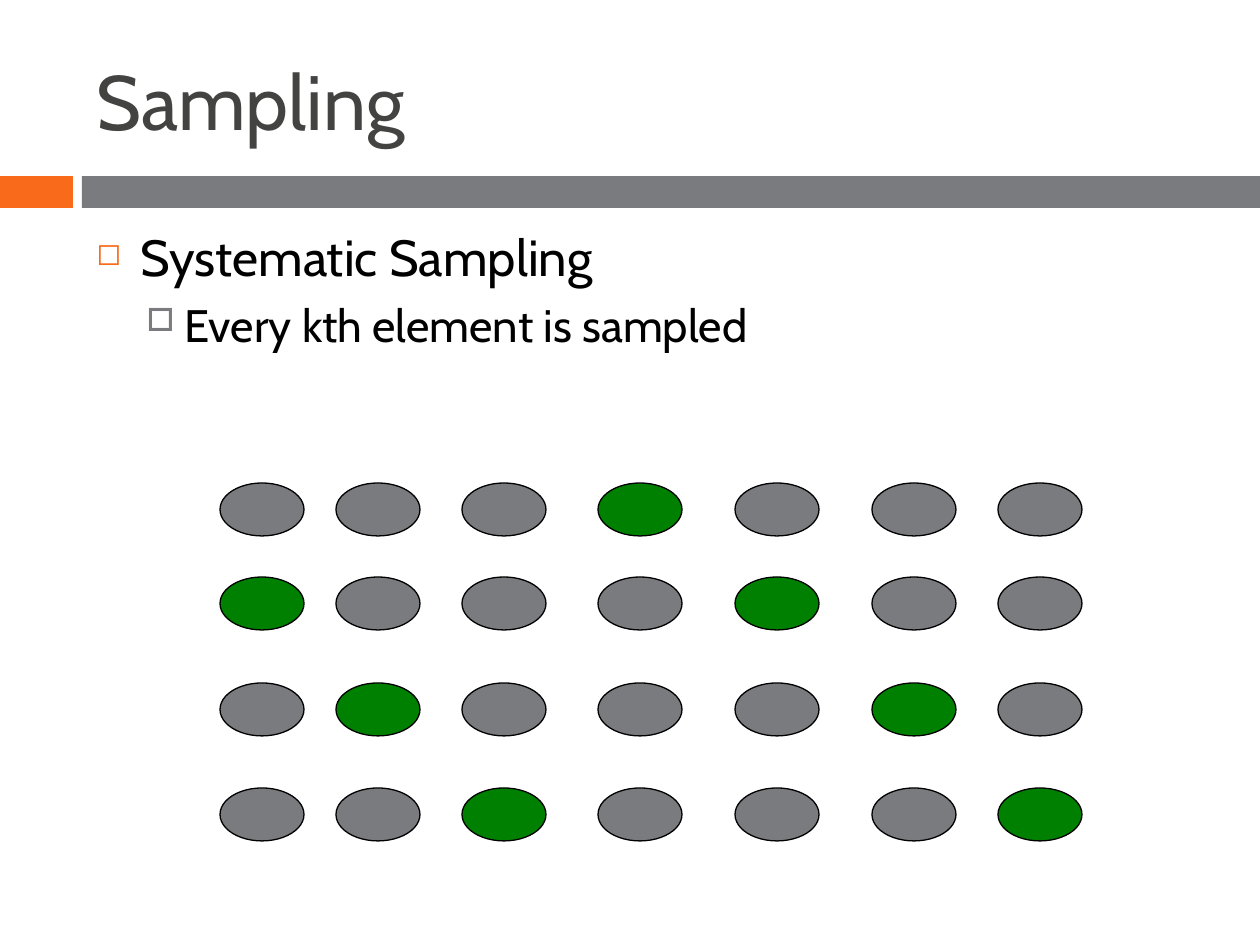
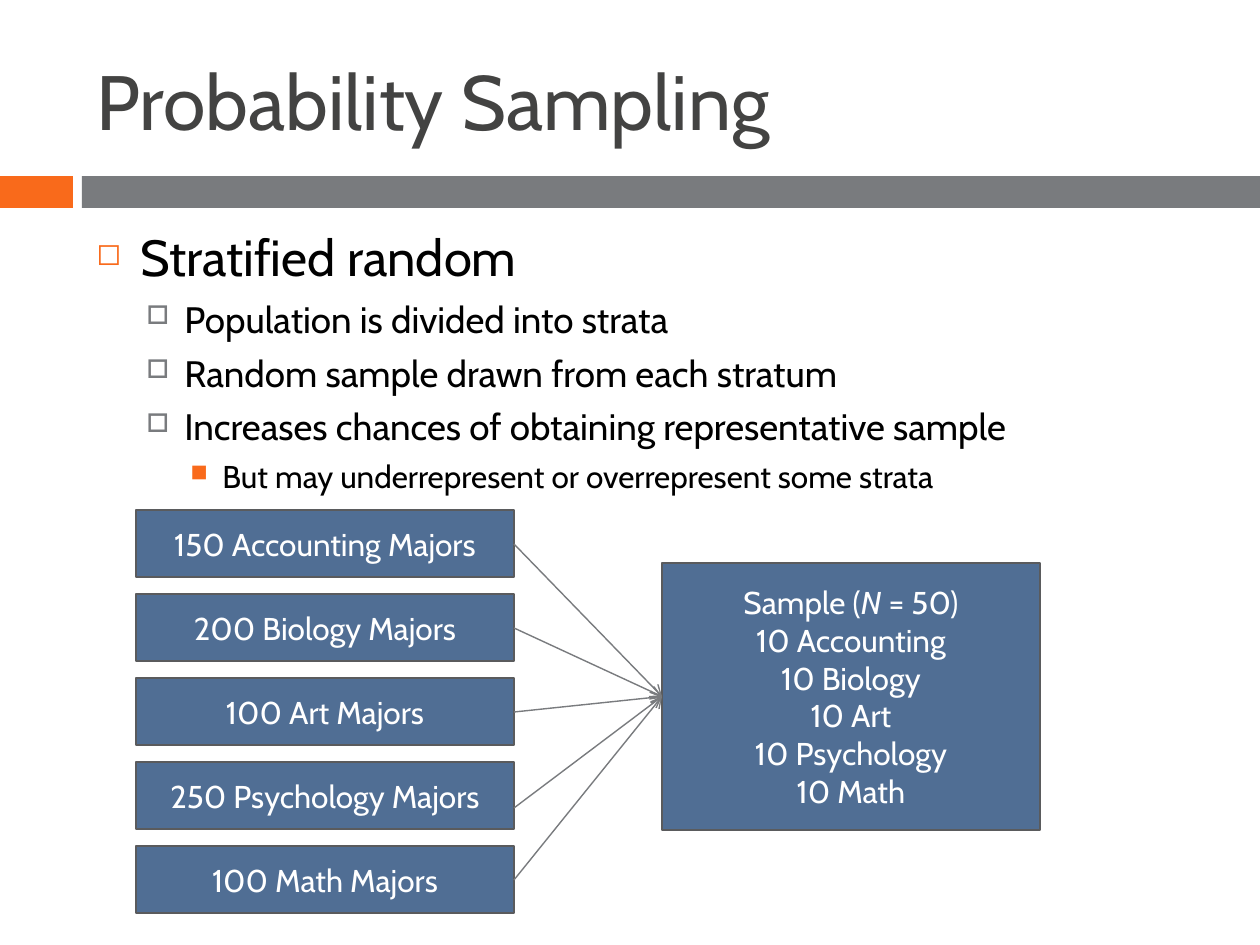
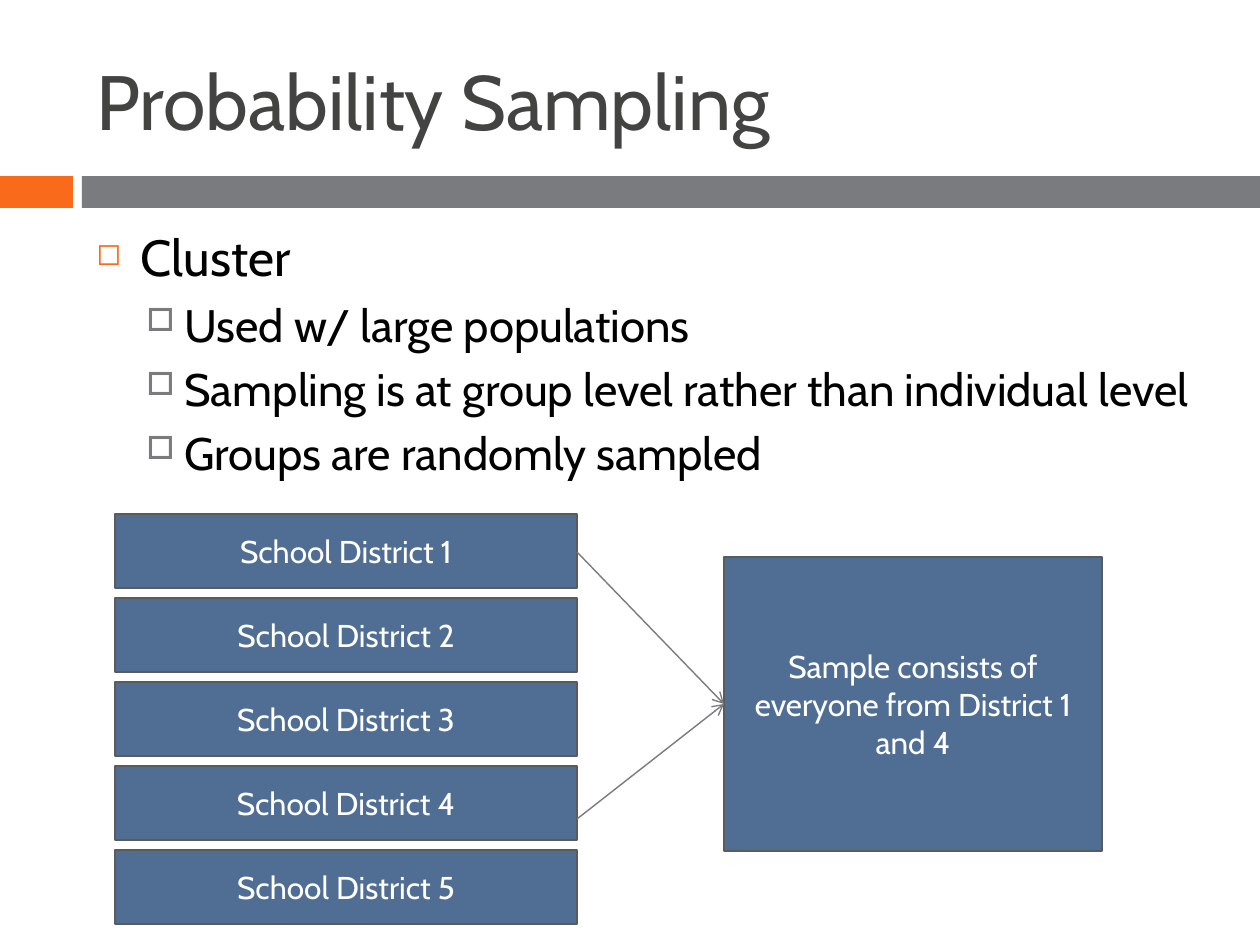
from lxml import etree
from pptx import Presentation
from pptx import util as u
from pptx.dml.color import RGBColor
from pptx.enum import shapes, text
from pptx.oxml import ns

PX = 914400 / 126  # EMU in one px
FONT = "Cabin"
COLORS = {
    "orange": "F96A1B", "gray": "797B7E", "title": "434342", "black": "000000",
    "white": "FFFFFF", "green": "008000", "blue": "506E94", "edge": "5A5B5D",
}
RECT, OVAL = shapes.MSO_SHAPE.RECTANGLE, shapes.MSO_SHAPE.OVAL

# One entry per outline level: indent and hanging in px, space before in points
LEVELS = [
    dict(left=44, hang=44, before=7, mark="◻", color="orange", percent=60),
    dict(left=88, hang=38, before=5.5, mark="□", color="gray", percent=70),
    dict(left=126, hang=32, before=5, mark="■", color="orange", percent=75),
]


def emu(*lengths):
    return [round(length * PX) for length in lengths]


def add_text(page, lines, at, kind=None, fill=None, edge=None, width=1.5, sizes=(18,),
             color="white", align=text.PP_ALIGN.CENTER, anchor=text.MSO_ANCHOR.MIDDLE,
             outline=False):
    """Add a box of (level, line) pairs; *stars* set words in italics."""
    if kind is None:
        box = page.shapes.add_textbox(*emu(*at))
    else:
        box = page.shapes.add_shape(kind, *emu(*at))
        box.shadow.inherit = False
        box.fill.solid()
        box.fill.fore_color.rgb = RGBColor.from_string(COLORS[fill])
        if edge:
            box.line.color.rgb = RGBColor.from_string(COLORS[edge])
            box.line.width = u.Pt(width)
        else:
            box.line.fill.background()
    frame = box.text_frame
    frame.word_wrap = True
    frame.vertical_anchor = anchor
    for number, (level, line) in enumerate(lines):
        para = frame.add_paragraph() if number else frame.paragraphs[0]
        para.alignment = align
        for part, words in enumerate(line.split("*")):
            span = para.add_run()
            span.text = words
            span.font.name = FONT
            span.font.size = u.Pt(sizes[level])
            span.font.italic = part % 2 == 1
            span.font.color.rgb = RGBColor.from_string(COLORS[color])
        if outline:
            style = LEVELS[level]
            para.level = level
            para.space_before = u.Pt(style["before"])
            props = para._p.get_or_add_pPr()
            left, hang = emu(style["left"], style["hang"])
            props.set("marL", str(left))
            props.set("indent", str(-hang))
            bullet_color = etree.SubElement(props, ns.qn("a:buClr"))
            etree.SubElement(bullet_color, ns.qn("a:srgbClr"), val=COLORS[style["color"]])
            etree.SubElement(props, ns.qn("a:buSzPct"), val=str(style["percent"] * 1000))
            etree.SubElement(props, ns.qn("a:buChar"), char=style["mark"])


deck = Presentation()
deck.slide_width, deck.slide_height = emu(1260, 945)

# Titles and outlines
outlines = [
    ("Sampling", (29, 26), 620, [
        (0, "Systematic Sampling"),
        (1, "Every kth element is sampled"),
    ]),
    ("Probability Sampling", (29, 21, 18), 290, [
        (0, "Stratified random"),
        (1, "Population is divided into strata"),
        (1, "Random sample drawn from each stratum"),
        (1, "Increases chances of obtaining representative sample"),
        (2, "But may underrepresent or overrepresent some strata"),
    ]),
    ("Probability Sampling", (29, 26), 620, [
        (0, "Cluster"),
        (1, "Used w/ large populations"),
        (1, "Sampling is at group level rather than individual level"),
        (1, "Groups are randomly sampled"),
    ]),
]
pages = []
for title, sizes, height, lines in outlines:
    page = deck.slides.add_slide(deck.slide_layouts[6])
    pages.append(page)
    add_text(page, [], (0, 176, 73, 32), kind=RECT, fill="orange")
    add_text(page, [], (82, 176, 1178, 32), kind=RECT, fill="gray")
    add_text(page, [(0, title)], (84, 32, 1124, 136), sizes=(44,), color="title",
             align=text.PP_ALIGN.LEFT)
    add_text(page, lines, (84, 220, 1124, height), sizes=sizes, color="black",
             align=text.PP_ALIGN.LEFT, anchor=text.MSO_ANCHOR.TOP, outline=True)

# Systematic sampling: every fourth element is green
columns = [220, 336, 462, 598, 735, 872, 998]
rows = [483, 577, 683, 788]
STEP = 4
for row, top in enumerate(rows):
    for column, left in enumerate(columns):
        count = row * len(columns) + column + 1
        add_text(pages[0], [], (left, top, 84, 53), kind=OVAL, edge="black", width=0.75,
                 fill="gray" if count % STEP else "green")

# Groups on the left, arrows to the sample on the right
GROUP_STEP = 84
majors = ["150 Accounting Majors", "200 Biology Majors", "100 Art Majors",
          "250 Psychology Majors", "100 Math Majors"]
districts = [f"School District {number}" for number in range(1, 6)]
strata_sample = ["Sample (*N* = 50)", "10 Accounting", "10 Biology", "10 Art",
                 "10 Psychology", "10 Math"]
cluster_sample = ["Sample consists of everyone from District 1 and 4"]
diagrams = [
    (pages[1], majors, (136, 510, 378, 67), strata_sample, (662, 563, 378, 267),
     [544, 628, 712, 808, 880]),
    (pages[2], districts, (115, 514, 462, 74), cluster_sample, (724, 557, 378, 294),
     [552, 819]),
]
for page, groups, (left, top, width, height), sample, sample_at, starts in diagrams:
    for number, group in enumerate(groups):
        add_text(page, [(0, group)], (left, top + number * GROUP_STEP, width, height),
                 kind=RECT, fill="blue", edge="edge")
    add_text(page, [(0, line) for line in sample], sample_at, kind=RECT, fill="blue",
             edge="edge")
    target = sample_at[0], sample_at[1] + sample_at[3] / 2
    for start in starts:
        arrow = page.shapes.add_connector(shapes.MSO_CONNECTOR.STRAIGHT,
                                          *emu(left + width, start, *target))
        arrow.line.color.rgb = RGBColor.from_string(COLORS["gray"])
        arrow.line.width = u.Pt(0.79)
        etree.SubElement(arrow.line._get_or_add_ln(), ns.qn("a:tailEnd"), type="arrow")
        etree.SubElement(arrow._element.spPr, ns.qn("a:effectLst"))

deck.save("out.pptx")
